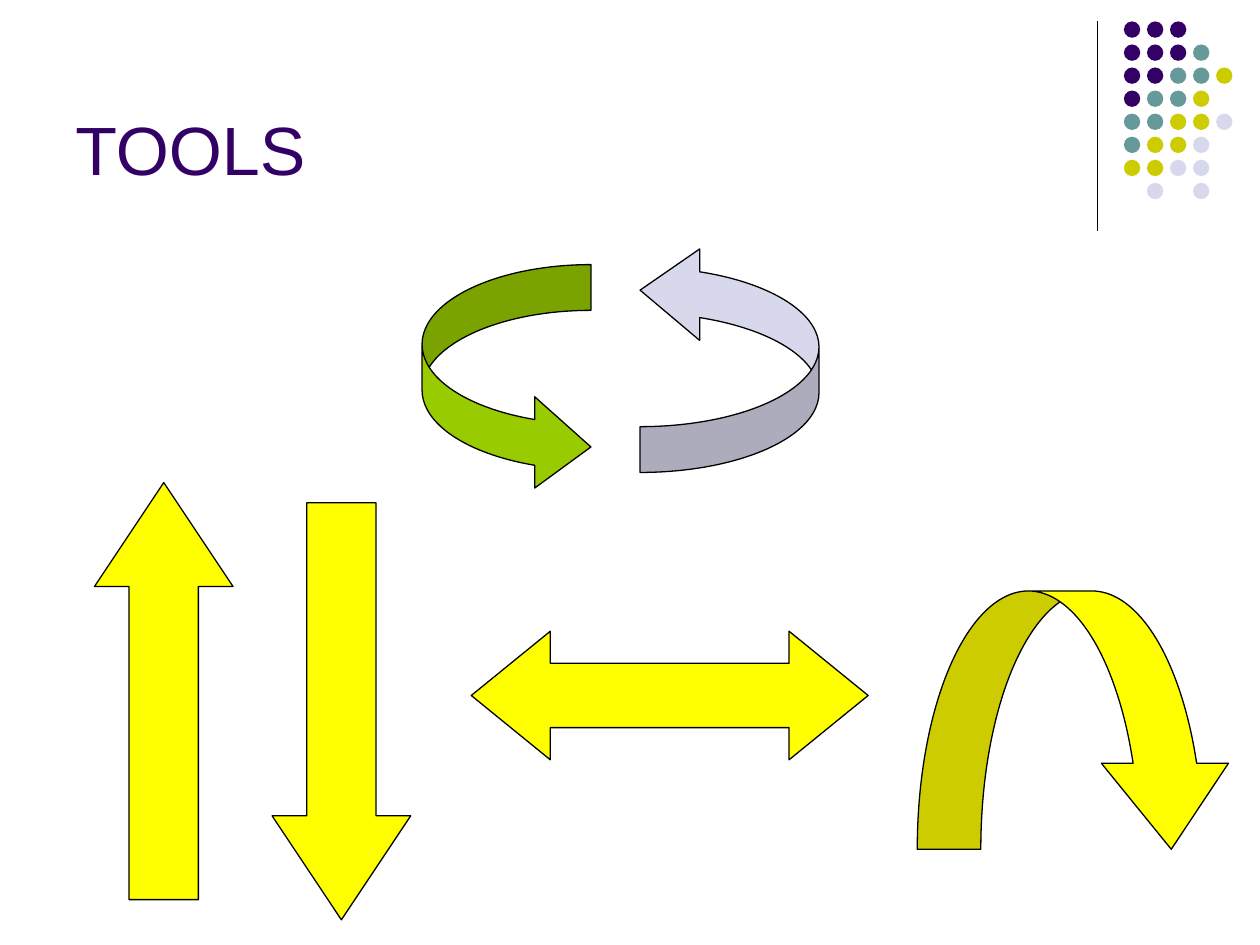
"""Build the TOOLS slide: a title, a dotted corner mark and six block arrows."""
from dataclasses import dataclass

from lxml.etree import SubElement
from pptx import Presentation as Deck
from pptx.dml.color import RGBColor as Color
from pptx.enum.shapes import MSO_CONNECTOR as Link
from pptx.enum.shapes import MSO_SHAPE as Kind
from pptx.enum.text import MSO_ANCHOR as Anchor
from pptx.oxml.ns import qn
from pptx.util import Inches, Pt

COLS, ROWS = 100, 75
WIDTH, HEIGHT = Inches(10), Inches(7.5)


@dataclass(frozen=True)
class Theme:
    font: str = "Arial"
    title: float = 39
    stroke: float = 0.75
    ink: str = "000000"
    plum: str = "330066"
    teal: str = "669999"
    olive: str = "CCCC00"
    mist: str = "D8D8EC"
    lime: str = "99CC00"
    sun: str = "FFFF00"


THEME = Theme()
DOTS = ("PPP", "PPPT", "PPTTO", "PTTO", "TTOOM", "TOOM", "OOMM", " M M")
TINTS = {"P": THEME.plum, "T": THEME.teal, "O": THEME.olive, "M": THEME.mist}
ARROWS = (
    (Kind.CURVED_RIGHT_ARROW, (33.5, 21, 13.4, 18.1), THEME.lime, (0.271, 0.541, 0.333), False),
    (Kind.CURVED_LEFT_ARROW, (50.8, 19.4, 14.2, 18.1), THEME.mist, (0.256, 0.511, 0.333), True),
    (Kind.UP_ARROW, (7.5, 38.3, 11, 33.1), THEME.sun, (0.5, 0.75), False),
    (Kind.DOWN_ARROW, (21.6, 39.9, 11, 33.1), THEME.sun, (0.5, 0.75), False),
    (Kind.LEFT_RIGHT_ARROW, (37.4, 50.1, 31.5, 10.2), THEME.sun, (0.5, 0.615), False),
    (Kind.CURVED_DOWN_ARROW, (72.8, 46.9, 25.2, 20.5), THEME.sun, (0.246, 0.492, 0.333), False),
)


def place(x, y, w, h):
    """Turn grid columns and rows into slide lengths."""
    return tuple(int(n * unit) for n, unit in zip((x, y, w, h), (WIDTH / COLS, HEIGHT / ROWS) * 2))


def add_shape(shapes, kind, box, tint):
    """Add a flat shape with a solid fill."""
    shape = shapes.add_shape(kind, *place(*box))
    shape.shadow.inherit = False
    shape.fill.solid()
    shape.fill.fore_color.rgb = Color.from_string(tint)
    return shape


def set_line(line):
    """Give an outline the theme's ink and weight."""
    line.color.rgb = Color.from_string(THEME.ink)
    line.width = Pt(THEME.stroke)


def add_rule(slide, x, top, end):
    """Draw an upright line in one column."""
    rule = slide.shapes.add_connector(Link.STRAIGHT, *place(x, top, x, end))
    set_line(rule.line)
    SubElement(rule._element.spPr, qn("a:effectLst"))


def add_dots(slide, left, top, size, pitch):
    """Fill the corner with a grouped grid of dots."""
    group = slide.shapes.add_group_shape()
    for row, marks in enumerate(DOTS):
        for col, mark in enumerate(marks):
            if mark in TINTS:
                box = (left + col * pitch, top + row * pitch, size, size)
                dot = add_shape(group.shapes, Kind.OVAL, box, TINTS[mark])
                dot.line.fill.background()


def add_title(slide, text, box):
    """Set the title at the bottom of its box."""
    frame = slide.shapes.add_textbox(*place(*box)).text_frame
    frame.word_wrap = True
    frame.vertical_anchor = Anchor.BOTTOM
    frame.text = text
    font = frame.paragraphs[0].runs[0].font
    font.name, font.size = THEME.font, Pt(THEME.title)
    font.color.rgb = Color.from_string(THEME.plum)


def add_arrow(slide, kind, box, tint, bends, flip):
    """Add an outlined block arrow, flipped upside down on request."""
    arrow = add_shape(slide.shapes, kind, box, tint)
    set_line(arrow.line)
    for spot, bend in enumerate(bends):
        arrow.adjustments[spot] = bend
    if flip:
        arrow._element.spPr.xfrm.set("flipV", "1")


def main():
    """Build and save the slide."""
    deck = Deck()
    deck.slide_width, deck.slide_height = WIDTH, HEIGHT
    slide = deck.slides.add_slide(deck.slide_layouts[6])
    add_rule(slide, 87.1, 1.7, 18.3)
    add_dots(slide, 89.2, 1.7, 1.3, 1.83)
    add_title(slide, "TOOLS", (5, 1.3, 82.5, 14.2))
    for arrow in ARROWS:
        add_arrow(slide, *arrow)
    deck.save("out.pptx")


if __name__ == "__main__":
    main()
